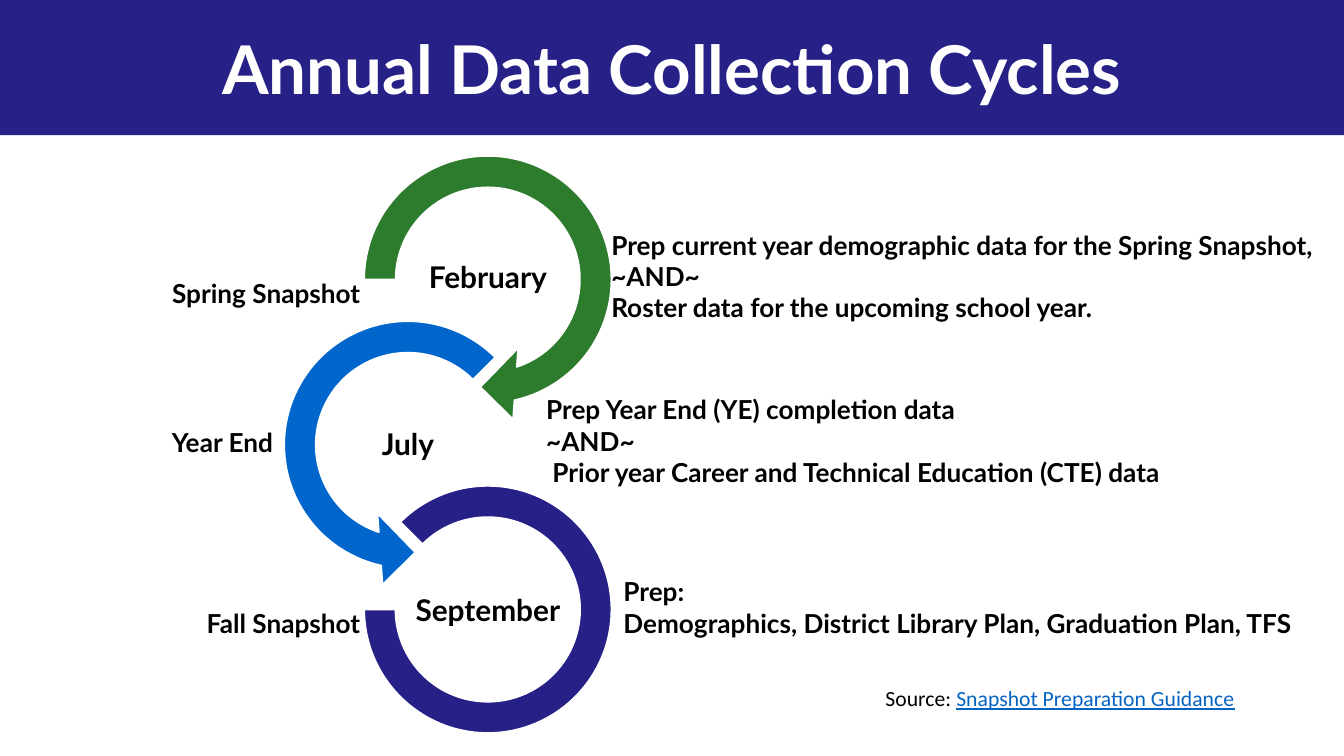
from pptx import Presentation
from pptx.dml.color import RGBColor
from pptx.enum.shapes import MSO_SHAPE
from pptx.enum.text import MSO_ANCHOR, PP_ALIGN
from pptx.util import Pt

PX = 4572  # EMU per px, 200 px to the inch
NAVY, GREEN, BLUE = "262087", "2D7B2D", "0066CC"
WHITE, BLACK, LINK = "FFFFFF", "000000", "0563C1"


def add_filled_shape(kind, box, fill, line=None):
    shape = slide.shapes.add_shape(kind, *[value * PX for value in box])
    shape.shadow.inherit = False
    shape.fill.solid()
    shape.fill.fore_color.rgb = RGBColor.from_string(fill)
    if line:
        shape.line.color.rgb = RGBColor.from_string(line)
        shape.line.width = Pt(1)
    else:
        shape.line.fill.background()
    return shape


def add_text(box, paragraphs, size=14, color=BLACK, align=PP_ALIGN.LEFT,
             anchor=MSO_ANCHOR.TOP, font="Lato", bold=True):
    """Each paragraph is a list of runs; a run in the link colour is underlined."""
    frame = slide.shapes.add_textbox(*[value * PX for value in box]).text_frame
    frame.word_wrap = True
    frame.vertical_anchor = anchor
    for index, runs in enumerate(paragraphs):
        paragraph = frame.add_paragraph() if index else frame.paragraphs[0]
        paragraph.alignment = align
        for text, run_color in runs:
            run = paragraph.add_run()
            run.text = text
            run.font.name = font
            run.font.size = Pt(size)
            run.font.bold = bold
            run.font.color.rgb = RGBColor.from_string(run_color or color)
            if run_color == LINK:
                run.font.underline = True
    return frame


presentation = Presentation()
presentation.slide_width = 2000 * PX
presentation.slide_height = 1125 * PX
slide = presentation.slides.add_slide(presentation.slide_layouts[6])

# Title band
add_filled_shape(MSO_SHAPE.RECTANGLE, (-2, 0, 2002, 201), NAVY)
add_text((0, 0, 2000, 202), [[("Annual Data Collection Cycles", None)]], size=36,
         color=WHITE, align=PP_ALIGN.CENTER, anchor=MSO_ANCHOR.MIDDLE)

# Cycle of three linked rings, each with its month
rings = [
    (MSO_SHAPE.CIRCULAR_ARROW, (512, 202, 428, 428), GREEN,
     (0.11, 11.42, 45, 108, 0.125), "February", (607, 356)),
    (MSO_SHAPE.LEFT_CIRCULAR_ARROW, (393, 448, 428, 428), BLUE,
     (0.11, 11.42, 63, 189, 0.125), "July", (488, 604)),
    (MSO_SHAPE.BLOCK_ARC, (542, 723, 368, 368), NAVY,
     (135, 108, 0.127), "September", (607, 852)),
]
for kind, box, fill, adjustments, month, (left, top) in rings:
    ring = add_filled_shape(kind, box, fill, line=WHITE)
    for index, value in enumerate(adjustments):
        ring.adjustments[index] = value
    frame = add_text((left, top, 238, 118), [[(month, None)]], size=16,
                     align=PP_ALIGN.CENTER, anchor=MSO_ANCHOR.MIDDLE)
    frame.margin_left = frame.margin_right = 2 * PX
    frame.margin_top = frame.margin_bottom = 2 * PX
    frame.paragraphs[0].line_spacing = 0.9

# Tasks to the right of the rings
tasks = [
    ((890, 331, 1110, 216),
     ["Prep current year demographic data for the Spring Snapshot, ~AND~",
      "Roster data for the upcoming school year."]),
    ((793, 576, 1030, 162),
     ["Prep Year End (YE) completion data", "~AND~",
      " Prior year Career and Technical Education (CTE) data"]),
    ((908, 847, 1052, 114),
     ["Prep:", "Demographics, District Library Plan, Graduation Plan, TFS"]),
]
for box, lines in tasks:
    add_text(box, [[(line, None)] for line in lines])

# Collection names to the left of the rings
collections = [
    ((224, 403, 332, 68), "Spring Snapshot"),
    ((170, 624, 256, 68), "Year End"),
    ((248, 894, 308, 68), "Fall Snapshot"),
]
for box, name in collections:
    add_text(box, [[(name, None)]], align=PP_ALIGN.RIGHT)

add_text((1298, 1010, 568, 98),
         [[("Source: ", None), ("Snapshot Preparation Guidance", LINK)]],
         size=11.6, font="Calibri", bold=False)

presentation.save("out.pptx")
